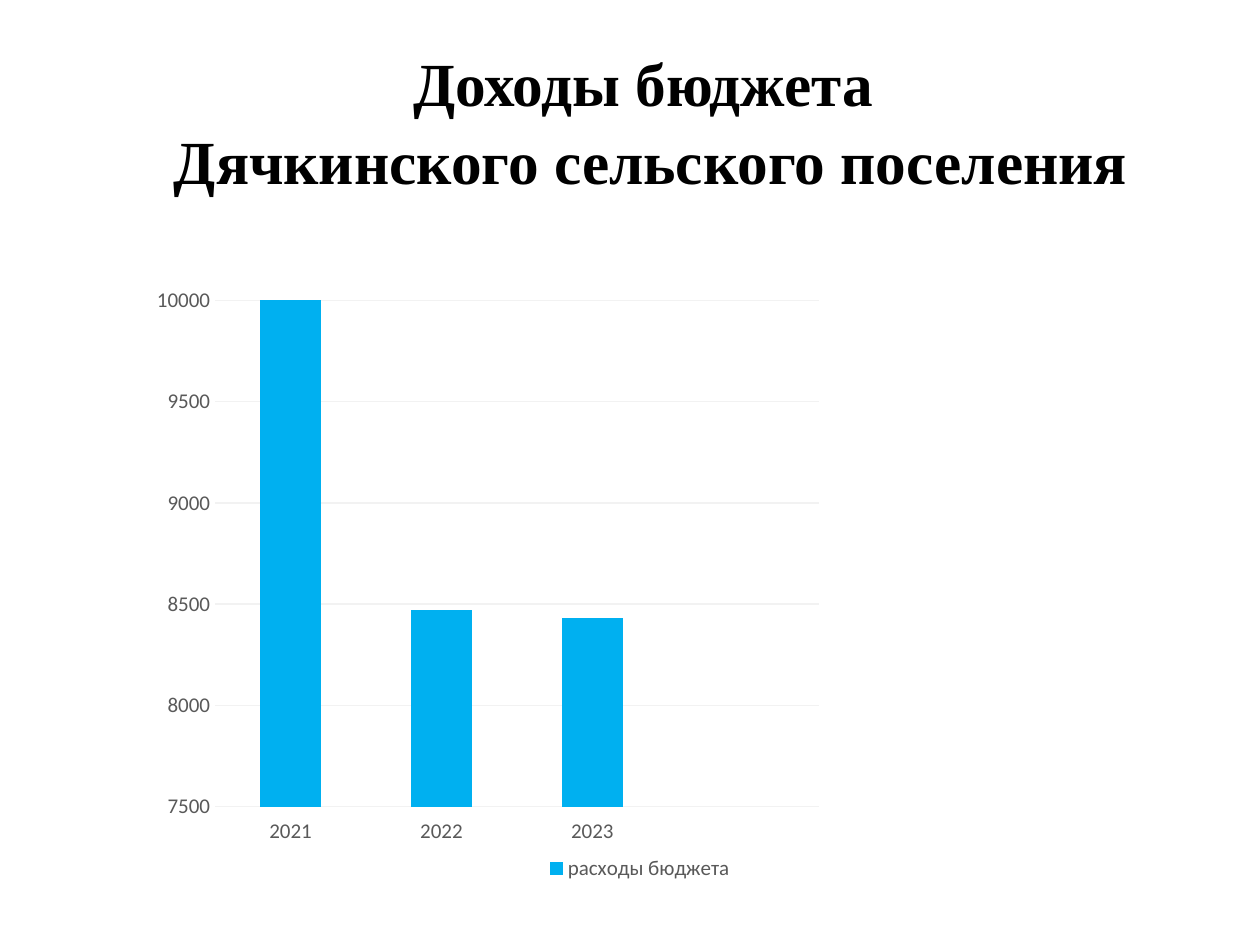
from pptx import Presentation
from pptx.chart.data import CategoryChartData
from pptx.dml.color import RGBColor
from pptx.enum.chart import XL_CHART_TYPE, XL_LEGEND_POSITION, XL_TICK_LABEL_POSITION, XL_TICK_MARK
from pptx.enum.text import MSO_ANCHOR, PP_ALIGN
from pptx.oxml import parse_xml
from pptx.oxml.ns import nsdecls
from pptx.util import Pt

COLUMNS = XL_CHART_TYPE.COLUMN_CLUSTERED
BOTTOM = XL_LEGEND_POSITION.BOTTOM
LOW = XL_TICK_LABEL_POSITION.LOW
NO_TICK = XL_TICK_MARK.NONE
TOP, CENTER = MSO_ANCHOR.TOP, PP_ALIGN.CENTER

# Content
TITLE = ["Доходы бюджета ", "Дячкинского сельского поселения"]
YEARS = ["2021", "2022", "2023", ""]
SERIES = ("расходы бюджета", [11100, 8470, 8430, None])

# Layout in px, 126 to the inch
SCALE = 914400 // 126
SLIDE_SIZE = (1260, 945)
TITLE_BOX = (84, 32, 1134, 158)
TITLE_INSET = 10
CHART_BOX = (81, 276, 1118, 610)
PLOT = {"x": 0.12, "y": 0.04, "w": 0.54, "h": 0.83}

COLORS = {"title": "000000", "label": "595959", "grid": "F2F2F2", "bar": "00B0F0"}
TITLE_FONT = {"name": "Times New Roman", "size": Pt(35), "bold": True}
LABEL_FONT = {"name": "Calibri", "size": Pt(12), "bold": False}
VALUE_SCALE = {"minimum_scale": 7500, "maximum_scale": 10000, "major_unit": 500}
AXIS_FORMAT = {"major_tick_mark": NO_TICK, "minor_tick_mark": NO_TICK}


def px(*lengths):
    return [length * SCALE for length in lengths]


def color(name):
    return RGBColor.from_string(COLORS[name])


def set_all(target, values):
    for name, value in values.items():
        setattr(target, name, value)


def format_font(font, values, color_name):
    set_all(font, values)
    font.color.rgb = color(color_name)


def add_title(slide):
    frame = slide.shapes.add_textbox(*px(*TITLE_BOX)).text_frame
    set_all(frame, {"word_wrap": True, "vertical_anchor": TOP,
                    "margin_top": TITLE_INSET * SCALE, "margin_bottom": 0})
    for index, line in enumerate(TITLE):
        paragraph = frame.add_paragraph() if index else frame.paragraphs[0]
        set_all(paragraph, {"alignment": CENTER, "line_spacing": 1.05})
        run = paragraph.add_run()
        run.text = line
        format_font(run.font, TITLE_FONT, "title")


def set_plot_area(chart):
    parts = "".join(f'<c:{side}Mode val="edge"/>' for side in "xy")
    parts += "".join(f'<c:{side} val="{share}"/>' for side, share in PLOT.items())
    layout = parse_xml(f'<c:layout {nsdecls("c")}><c:manualLayout>'
                       f'<c:layoutTarget val="inner"/>{parts}'
                       '</c:manualLayout></c:layout>')
    plot_area = chart.plots[0]._element.getparent()
    for old_layout in plot_area.findall(layout.tag):
        plot_area.remove(old_layout)
    plot_area.insert(0, layout)


def add_budget_chart(slide):
    data = CategoryChartData()
    data.categories = YEARS
    data.add_series(*SERIES)
    chart = slide.shapes.add_chart(COLUMNS, *px(*CHART_BOX), data).chart
    set_all(chart, {"has_title": False, "has_legend": True})
    format_font(chart.font, LABEL_FONT, "label")
    set_plot_area(chart)

    # Columns
    plot = chart.plots[0]
    set_all(plot, {"gap_width": 150, "vary_by_categories": False})
    fill = plot.series[0].format.fill
    fill.solid()
    fill.fore_color.rgb = color("bar")

    # Axes and gridlines
    for axis in (chart.category_axis, chart.value_axis):
        set_all(axis, AXIS_FORMAT)
        axis.format.line.fill.background()
        format_font(axis.tick_labels.font, LABEL_FONT, "label")
    chart.category_axis.tick_label_position = LOW
    set_all(chart.value_axis, VALUE_SCALE)
    chart.value_axis.has_major_gridlines = True
    grid_line = chart.value_axis.major_gridlines.format.line
    grid_line.width = Pt(0.75)
    grid_line.color.rgb = color("grid")

    # Legend
    set_all(chart.legend, {"position": BOTTOM, "include_in_layout": False})
    format_font(chart.legend.font, LABEL_FONT, "label")


def main():
    presentation = Presentation()
    presentation.slide_width, presentation.slide_height = px(*SLIDE_SIZE)
    slide = presentation.slides.add_slide(presentation.slide_layouts[6])
    add_title(slide)
    add_budget_chart(slide)
    presentation.save("out.pptx")


if __name__ == "__main__":
    main()
